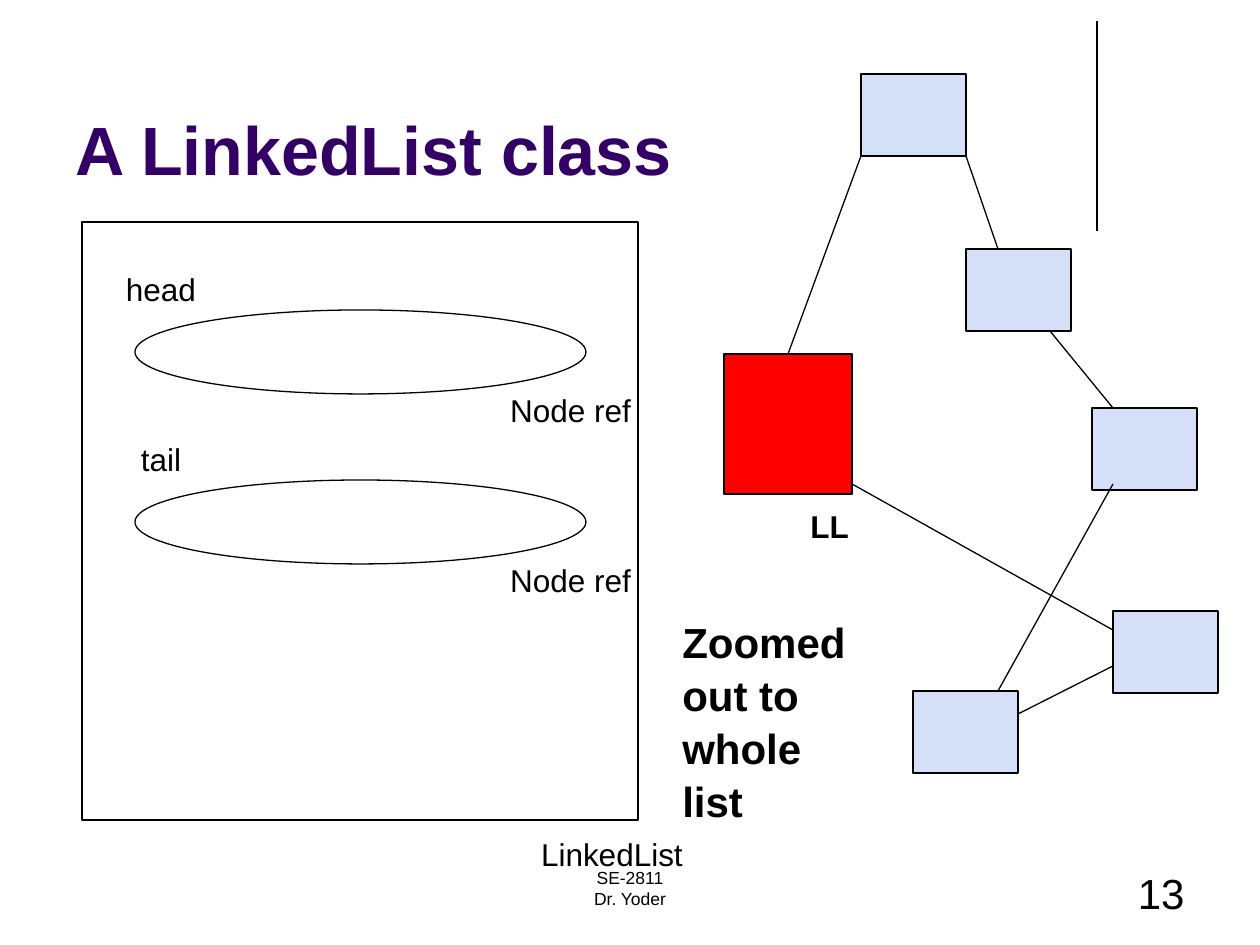
from lxml import etree
from pptx import Presentation
from pptx.dml.color import RGBColor
from pptx.enum.shapes import MSO_CONNECTOR as Connector, MSO_SHAPE as Shape
from pptx.enum.text import MSO_ANCHOR as Anchor, MSO_AUTO_SIZE as AutoSize, PP_ALIGN as Align
from pptx.oxml.ns import qn
from pptx.util import Emu, Pt

BLACK = RGBColor(0x00, 0x00, 0x00)
PURPLE = RGBColor(0x33, 0x00, 0x66)
PALE_BLUE = RGBColor(0xD5, 0xDF, 0xF7)
RED = RGBColor(0xFF, 0x00, 0x00)

PX_PER_INCH = 126
FONT = "Arial"
LINE_WIDTH = Pt(0.75)


def px(value):
    return Emu(round(value * 914400 / PX_PER_INCH))


class SlideBuilder:
    def __init__(self, presentation):
        self.slide = presentation.slides.add_slide(presentation.slide_layouts[5])

    def fill_frame(self, frame, lines, size, color=BLACK, bold=False,
                   align=Align.LEFT, anchor=Anchor.TOP, wrap=True, spacing=None):
        frame.word_wrap = wrap
        frame.auto_size = AutoSize.NONE
        frame.vertical_anchor = anchor
        for index, line in enumerate(lines):
            paragraph = frame.add_paragraph() if index else frame.paragraphs[0]
            paragraph.alignment = align
            if spacing:
                paragraph.line_spacing = spacing
            run = paragraph.add_run()
            run.text = line
            run.font.name = FONT
            run.font.size = Pt(size)
            run.font.bold = bold
            run.font.color.rgb = color

    def title(self, text, left, top, width, height):
        title = self.slide.shapes.title
        title.left, title.top = px(left), px(top)
        title.width, title.height = px(width), px(height)
        self.fill_frame(title.text_frame, [text], 39, PURPLE, True, anchor=Anchor.BOTTOM)

    def text(self, lines, left, top, width, height, size, **style):
        box = self.slide.shapes.add_textbox(px(left), px(top), px(width), px(height))
        self.fill_frame(box.text_frame, lines, size, **style)

    def label(self, text, left, top):
        self.text([text], left, top, 116, 54, 18,
                  align=Align.CENTER, anchor=Anchor.MIDDLE, wrap=False)

    def shape(self, kind, left, top, width, height, fill=None):
        shape = self.slide.shapes.add_shape(kind, px(left), px(top), px(width), px(height))
        shape.shadow.inherit = False
        if fill is None:
            shape.fill.background()
        else:
            shape.fill.solid()
            shape.fill.fore_color.rgb = fill
        shape.line.color.rgb = BLACK
        shape.line.width = LINE_WIDTH

    def line(self, x1, y1, x2, y2):
        line = self.slide.shapes.add_connector(
            Connector.STRAIGHT, px(x1), px(y1), px(x2), px(y2))
        line.line.color.rgb = BLACK
        line.line.width = LINE_WIDTH
        etree.SubElement(line._element.spPr, qn("a:effectLst"))


def main():
    presentation = Presentation()
    presentation.slide_width, presentation.slide_height = px(1260), px(945)
    builder = SlideBuilder(presentation)

    # Title, divider and footer
    builder.line(1097, 21, 1097, 231)
    builder.title("A LinkedList class", 63, 38, 1134, 157)
    builder.text(["SE-2811", "Dr. Yoder"], 430, 861, 400, 63, 10, align=Align.CENTER)
    builder.text(["13"], 903, 861, 294, 63, 24, align=Align.RIGHT)

    # LinkedList object with its two references
    builder.shape(Shape.RECTANGLE, 82, 222, 556, 598)
    builder.label("LinkedList", 554, 827)
    for name, top in (("head", 262), ("tail", 432)):
        builder.label(name, 103, top)
        builder.shape(Shape.OVAL, 135, top + 48, 451, 84)
        builder.label("Node ref ", 517, top + 121)

    # Nodes of the whole list
    for left, top in ((861, 74), (966, 249), (1092, 408), (913, 691), (1113, 611)):
        builder.shape(Shape.RECTANGLE, left, top, 105, 82, PALE_BLUE)
    builder.shape(Shape.RECTANGLE, 724, 354, 128, 140, RED)
    builder.text(["LL"], 798, 501, 64, 50, 18, bold=True, wrap=False)

    # Links, from the list object round and back
    for link in ((788, 354, 861, 156), (966, 156, 998, 249), (1050, 331, 1113, 408),
                 (1113, 484, 998, 691), (1018, 714, 1113, 666), (852, 484, 1113, 630)):
        builder.line(*link)

    builder.text(["Zoomed out to whole list"], 670, 543, 212, 289, 24,
                 bold=True, anchor=Anchor.BOTTOM, spacing=1.05)

    presentation.save("out.pptx")


if __name__ == "__main__":
    main()
